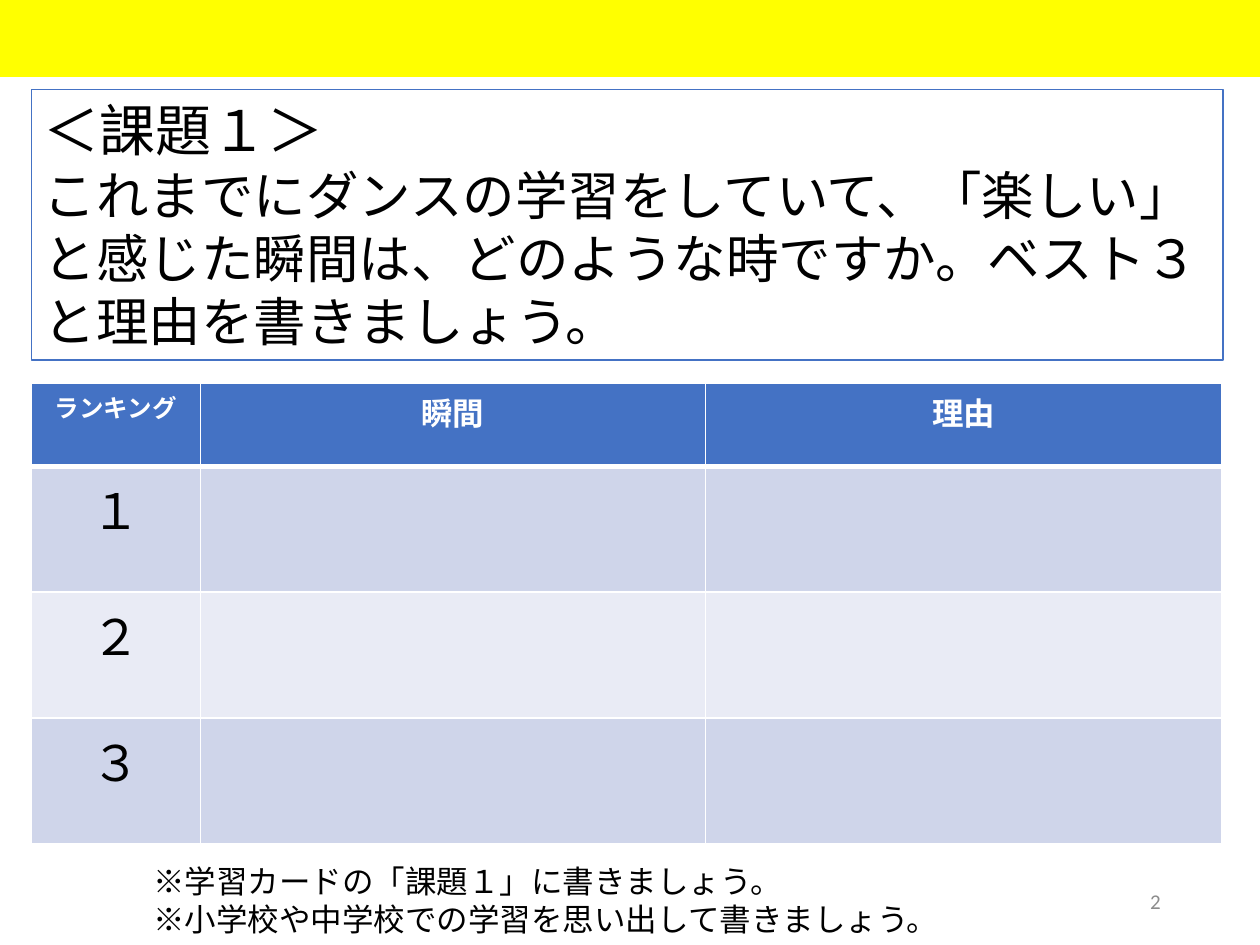
import pptx
import pptx.util
import pptx.dml.color
import pptx.enum.shapes
import pptx.enum.text
import pptx.oxml.ns
from lxml import etree

Inches, Pt = pptx.util.Inches, pptx.util.Pt
RGBColor = pptx.dml.color.RGBColor
PP_ALIGN = pptx.enum.text.PP_ALIGN
MSO_ANCHOR = pptx.enum.text.MSO_ANCHOR
qn = pptx.oxml.ns.qn

YELLOW = RGBColor(0xFF, 0xFF, 0x00)
BLUE = RGBColor(0x44, 0x72, 0xC4)
BAND_DARK = RGBColor(0xCF, 0xD5, 0xEA)
BAND_LIGHT = RGBColor(0xE9, 0xEB, 0xF5)
GRAY = RGBColor(0x8C, 0x8C, 0x8C)
BLACK = RGBColor(0x00, 0x00, 0x00)
WHITE = RGBColor(0xFF, 0xFF, 0xFF)


class SlideBuilder:
    """Holds the style and the current slide."""

    font = "Calibri"

    def __init__(self, s):
        self.s = s

    def add_lines(self, tf, lines, color=BLACK, align=PP_ALIGN.LEFT, bold=False):
        """Fill a text frame with one paragraph per (text, size) pair."""
        for i, (text, size) in enumerate(lines):
            p = tf.add_paragraph() if i else tf.paragraphs[0]
            p.alignment = align
            r = p.add_run()
            r.text = text
            r.font.name = self.font
            r.font.size = Pt(size)
            r.font.bold = bold
            r.font.color.rgb = color

    def rect(self, x, y, w, h, fill=None, line=None, lines=()):
        sp = self.s.shapes.add_shape(
            pptx.enum.shapes.MSO_SHAPE.RECTANGLE,
            Inches(x), Inches(y), Inches(w), Inches(h))
        sp.shadow.inherit = False
        if fill is None:
            sp.fill.background()
        else:
            sp.fill.solid()
            sp.fill.fore_color.rgb = fill
        if line is None:
            sp.line.fill.background()
        else:
            sp.line.color.rgb = line
            sp.line.width = Pt(1)
        tf = sp.text_frame
        tf.word_wrap = True
        tf.vertical_anchor = MSO_ANCHOR.TOP
        self.add_lines(tf, lines)

    def text(self, x, y, w, h, lines, anchor=MSO_ANCHOR.TOP, **style):
        sp = self.s.shapes.add_textbox(Inches(x), Inches(y), Inches(w), Inches(h))
        tf = sp.text_frame
        tf.word_wrap = True
        tf.vertical_anchor = anchor
        self.add_lines(tf, lines, **style)

    def borders(self, cell, color, bottom):
        """Draw 1 pt borders, with the bottom one at its own width."""
        tc_pr = cell._tc.get_or_add_tcPr()
        for side, width in (("L", 1), ("R", 1), ("T", 1), ("B", bottom)):
            ln = etree.SubElement(tc_pr, qn(f"a:ln{side}"), w=str(Pt(width)))
            fill = etree.SubElement(ln, qn("a:solidFill"))
            etree.SubElement(fill, qn("a:srgbClr"), val=str(color))

    def table(self, x, y, widths, heights, rows, fills):
        """Rows hold (text, size) pairs; the first row is the header."""
        table = self.s.shapes.add_table(
            len(rows), len(widths), Inches(x), Inches(y),
            Inches(sum(widths)), Inches(sum(heights))).table
        for col, width in zip(table.columns, widths):
            col.width = Inches(width)
        for i, (height, fill) in enumerate(zip(heights, fills)):
            table.rows[i].height = Inches(height)
            header = i == 0
            for j in range(len(widths)):
                cell = table.cell(i, j)
                self.borders(cell, WHITE, 3 if header else 1)
                cell.fill.solid()
                cell.fill.fore_color.rgb = fill
                if j < len(rows[i]):
                    self.add_lines(cell.text_frame, [rows[i][j]],
                                   color=WHITE if header else BLACK,
                                   align=PP_ALIGN.CENTER, bold=header)


def main():
    prs = pptx.Presentation()
    prs.slide_width, prs.slide_height = Inches(10), Inches(7.5)
    b = SlideBuilder(prs.slides.add_slide(prs.slide_layouts[6]))

    # Title band and slide number
    b.rect(-0.01, 0, 10.02, 0.61, fill=YELLOW)
    b.text(7.06, 6.95, 2.25, 0.4, [("2", 12)], anchor=MSO_ANCHOR.MIDDLE,
           color=GRAY, align=PP_ALIGN.RIGHT)

    # Task
    b.rect(0.25, 0.71, 9.46, 2.15, line=BLUE, lines=[
        ("＜課題１＞", 32),
        ("これまでにダンスの学習をしていて、「楽しい」と感じた瞬間は、"
         "どのような時ですか。ベスト３と理由を書きましょう。", 30)])

    # Ranking table, with blank cells to fill in
    header = [("ランキング", 14), ("瞬間", 18), ("理由", 18)]
    ranks = [[(rank, 28)] for rank in "１２３"]
    b.table(0.25, 3.04, [1.34, 4.01, 4.1], [0.66] + [1] * 3,
            [header] + ranks, [BLUE, BAND_DARK, BAND_LIGHT, BAND_DARK])

    # Notes for the learner
    b.text(1.12, 6.79, 8.04, 0.71, [
        ("※学習カードの「課題１」に書きましょう。", 18),
        ("※小学校や中学校での学習を思い出して書きましょう。", 18)])

    prs.save("out.pptx")


if __name__ == "__main__":
    main()
